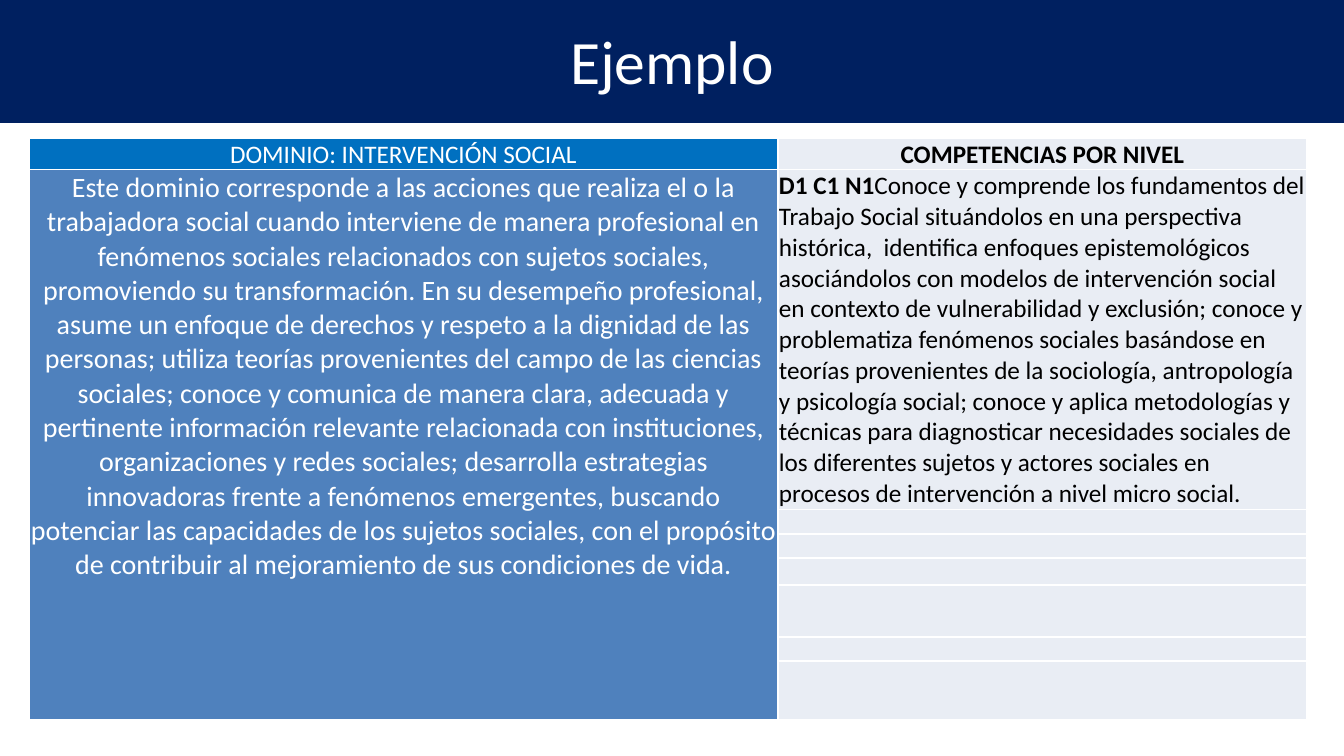
from pptx import Presentation, util as u
from pptx.dml.color import RGBColor
from pptx.enum import shapes, text
from pptx.oxml import xmlchemy as xml

PX = 914400 / 100.8
FONT = "Calibri"
HUES = {"navy": "002060", "blue": "0070C0", "steel": "4F81BD",
        "pale": "E9EDF4", "white": "FFFFFF", "black": "000000"}
COLS = [749, 529]
ROWS = [31, 339, 25, 24, 27, 52, 24, 59]

DOMAIN = (
    "Este dominio corresponde a las acciones que realiza el o la trabajadora social "
    "cuando interviene de manera profesional en fenómenos sociales relacionados con "
    "sujetos sociales, promoviendo su transformación. En su desempeño profesional, asume "
    "un enfoque de derechos y respeto a la dignidad de las personas; utiliza teorías "
    "provenientes del campo de las ciencias sociales; conoce y comunica de manera clara, "
    "adecuada y pertinente información relevante relacionada con instituciones, "
    "organizaciones y redes sociales; desarrolla estrategias innovadoras frente a "
    "fenómenos emergentes, buscando potenciar las capacidades de los sujetos sociales, "
    "con el propósito de contribuir al mejoramiento de sus condiciones de vida.")
LEVEL = (
    "Conoce y comprende los fundamentos del Trabajo Social situándolos en una "
    "perspectiva histórica,  identifica enfoques epistemológicos asociándolos con "
    "modelos de intervención social en contexto de vulnerabilidad y exclusión; conoce y "
    "problematiza fenómenos sociales basándose en teorías provenientes de la sociología, "
    "antropología y psicología social; conoce y aplica metodologías y técnicas para "
    "diagnosticar necesidades sociales de los diferentes sujetos y actores sociales en "
    "procesos de intervención a nivel micro social.")


def px(n):
    return u.Emu(round(n * PX))


def paint(item, hue):
    item.fill.solid()
    item.fill.fore_color.rgb = RGBColor.from_string(HUES[hue])


def style(run, size, hue, bold=False):
    run.font.name = FONT
    run.font.size = u.Pt(size)
    run.font.bold = bold
    run.font.color.rgb = RGBColor.from_string(HUES[hue])


def add_title(slide, words):
    bar = slide.shapes.add_shape(shapes.MSO_SHAPE.RECTANGLE,
                                 px(0), px(-3), px(1344), px(126))
    bar.shadow.inherit = False
    paint(bar, "navy")
    bar.line.fill.background()
    frame = bar.text_frame
    frame.text = words
    frame.vertical_anchor = text.MSO_ANCHOR.MIDDLE
    line = frame.paragraphs[0]
    line.alignment = text.PP_ALIGN.CENTER
    style(line.runs[0], 44, "white")


def add_edges(cell):
    """Give the cell thin white borders, placed ahead of its fill."""
    props = cell._tc.get_or_add_tcPr()
    for spot, side in enumerate(("lnL", "lnR", "lnT", "lnB")):
        edge = xml.OxmlElement(f"a:{side}")
        edge.set("w", str(u.Pt(1)))
        fill = xml.OxmlElement("a:solidFill")
        tint = xml.OxmlElement("a:srgbClr")
        tint.set("val", HUES["white"])
        fill.append(tint)
        edge.append(fill)
        props.insert(spot, edge)


def shrink(cell):
    """Set a small font in an empty cell so that its row can stay low."""
    end = xml.OxmlElement("a:endParaRPr")
    end.set("sz", "1200")
    cell.text_frame.paragraphs[0]._p.append(end)


def write(cell, words, size, hue, align=text.PP_ALIGN.CENTER, bold=False):
    cell.text_frame.text = words
    line = cell.text_frame.paragraphs[0]
    line.alignment = align
    style(line.runs[0], size, hue, bold)
    return line


def add_grid(slide):
    grid = slide.shapes.add_table(len(ROWS), len(COLS), px(29), px(138),
                                  px(sum(COLS)), px(sum(ROWS))).table
    for col, width in zip(grid.columns, COLS):
        col.width = px(width)
    for row, height in zip(grid.rows, ROWS):
        row.height = px(height)
    for cell in grid.iter_cells():
        cell.margin_left = cell.margin_right = cell.margin_top = px(1)
        cell.margin_bottom = 0
        paint(cell, "pale")
        add_edges(cell)

    head, goal = grid.cell(0, 0), grid.cell(0, 1)
    paint(head, "blue")
    write(head, "DOMINIO: INTERVENCIÓN SOCIAL", 18, "white")
    write(goal, "COMPETENCIAS POR NIVEL", 18, "black", bold=True)
    for cell in (head, goal):
        cell.vertical_anchor = text.MSO_ANCHOR.MIDDLE

    body = grid.cell(1, 0)
    body.merge(grid.cell(len(ROWS) - 1, 0))
    paint(body, "steel")
    write(body, DOMAIN, 20, "white")

    line = write(grid.cell(1, 1), "D1 C1 N1", 18, "black",
                 text.PP_ALIGN.LEFT, True)
    run = line.add_run()
    run.text = LEVEL
    style(run, 18, "black")

    for cell in grid.iter_cells():
        if not cell.text_frame.text:
            shrink(cell)


def main():
    deck = Presentation()
    deck.slide_width, deck.slide_height = px(1344), px(756)
    slide = deck.slides.add_slide(deck.slide_layouts[6])
    add_title(slide, "Ejemplo")
    add_grid(slide)
    deck.save("out.pptx")


if __name__ == "__main__":
    main()
